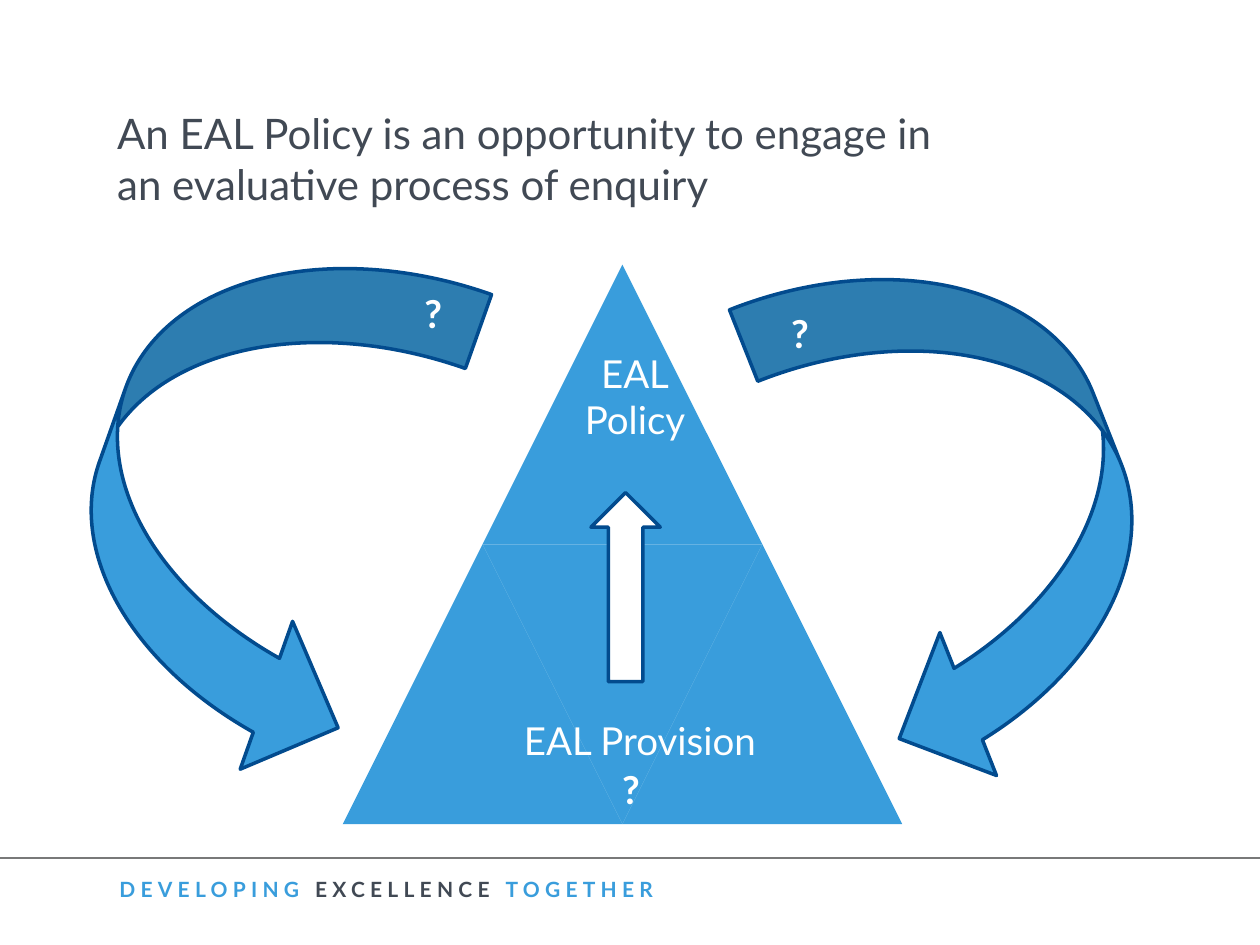
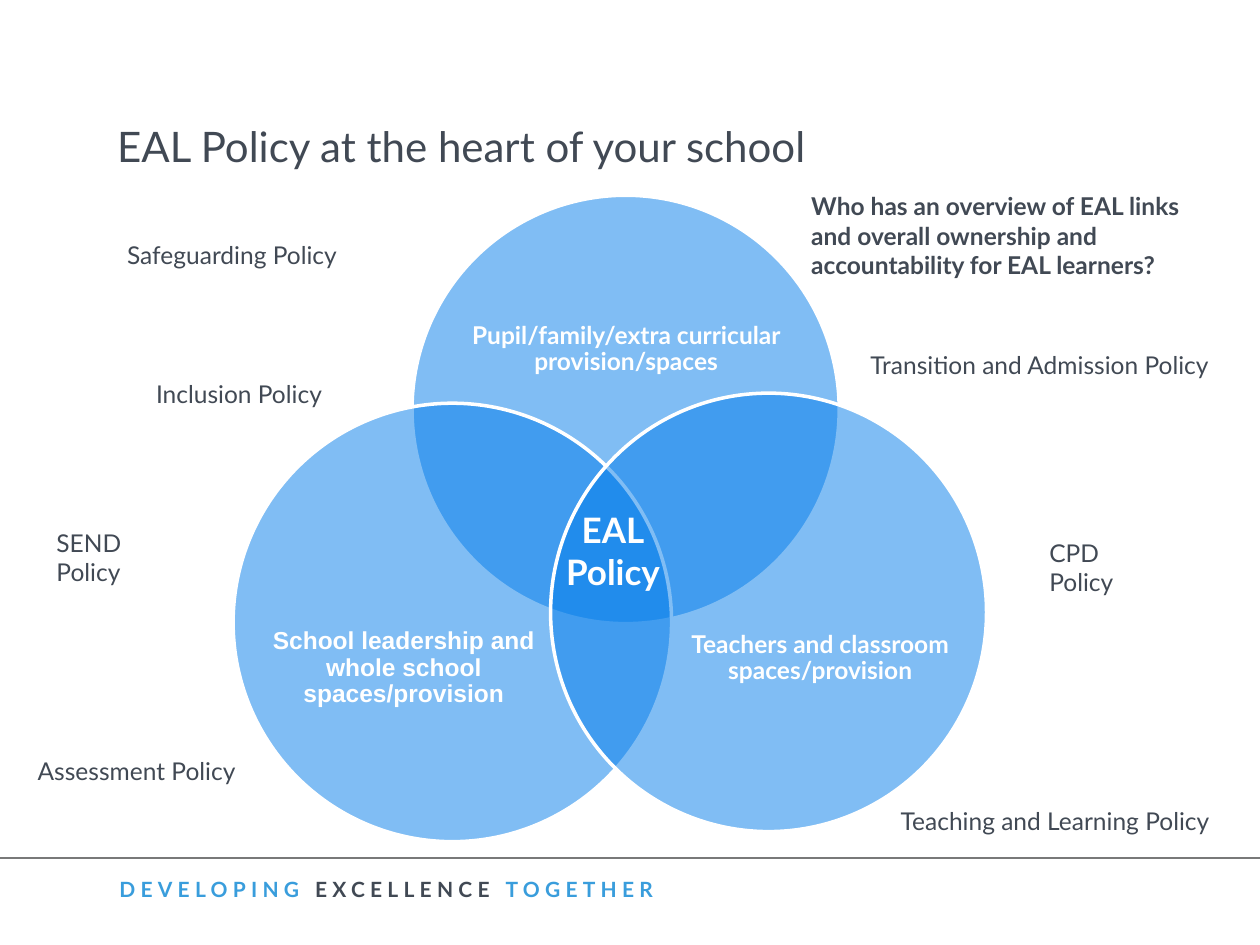
import dataclasses

import pptx
import pptx.dml.color
import pptx.enum.shapes
import pptx.enum.text
import pptx.oxml.ns
import pptx.util
from lxml import etree

RGBColor = pptx.dml.color.RGBColor
Shape = pptx.enum.shapes.MSO_SHAPE
Align = pptx.enum.text.PP_ALIGN
Anchor = pptx.enum.text.MSO_ANCHOR
qn = pptx.oxml.ns.qn

SKY = RGBColor(0x39, 0x9D, 0xDC)
NAVY = RGBColor(0x02, 0x4B, 0x8E)
AZURE = RGBColor(0x03, 0x7D, 0xEB)
SLATE = RGBColor(0x41, 0x49, 0x54)
GREY = RGBColor(0x78, 0x79, 0x79)
WHITE = RGBColor(0xFF, 0xFF, 0xFF)
FONT = "Lato"

# The slide is a grid of 100 columns by 75 rows
COLUMNS, ROWS = 100, 75
WIDTH, HEIGHT = pptx.util.Inches(10), pptx.util.Inches(7.5)
TITLE_ONLY = 5


@dataclasses.dataclass
class Box:
    """A region of the slide, in grid columns and rows."""
    column: float
    row: float
    columns: float
    rows: float

    def inside(self, column, row, columns, rows):
        return Box(self.column + column, self.row + row, columns, rows)

    def place(self):
        return (round(self.column * WIDTH / COLUMNS),
                round(self.row * HEIGHT / ROWS),
                round(self.columns * WIDTH / COLUMNS),
                round(self.rows * HEIGHT / ROWS))


FULL_PAGE = Box(0, 0, COLUMNS, ROWS)


def style_span(span, size, color, bold=False, name=FONT):
    span.font.size = pptx.util.Pt(size)
    span.font.name = name
    span.font.bold = bold
    span.font.color.rgb = color


def add_text(page, box, lines, size, color, bold=False, align=Align.LEFT, name=FONT):
    frame = page.shapes.add_textbox(*box.place()).text_frame
    frame.word_wrap = True
    frame.text = lines
    for para in frame.paragraphs:
        para.alignment = align
        for span in para.runs:
            style_span(span, size, color, bold, name)
    return frame


def add_figure(page, kind, box, fill, line=None, rotation=0):
    figure = page.shapes.add_shape(kind, *box.place())
    figure.shadow.inherit = False
    figure.fill.solid()
    figure.fill.fore_color.rgb = fill
    figure.rotation = rotation
    if line is None:
        figure.line.fill.background()
    else:
        figure.line.color.rgb = line
        figure.line.width = pptx.util.Pt(2)
    return figure


def add_title(page, box, text):
    title = page.shapes.title
    title.left, title.top, title.width, title.height = box.place()
    frame = title.text_frame
    frame.text = text
    frame.auto_size = pptx.enum.text.MSO_AUTO_SIZE.NONE
    frame.vertical_anchor = Anchor.MIDDLE
    frame.paragraphs[0].alignment = Align.LEFT
    style_span(frame.paragraphs[0].runs[0], 24, SLATE)


def add_footer(page, box):
    # Rule across the slide
    left, top, width, _ = box.place()
    rule = page.shapes.add_connector(pptx.enum.shapes.MSO_CONNECTOR.STRAIGHT,
                                     left, top, left + width, top)
    rule.line.color.rgb = GREY
    rule.line.width = pptx.util.Pt(0.75)
    etree.SubElement(rule._element.spPr, qn("a:effectLst"))

    # Spaced motto
    motto = page.shapes.add_textbox(*box.inside(8.5, 1, 54.4, 4.4).place())
    para = motto.text_frame.paragraphs[0]
    for word, color in (("DEVELOPING", SKY), (" EXCELLENCE ", SLATE), ("TOGETHER", SKY)):
        span = para.add_run()
        span.text = word
        style_span(span, 12, color, True)
        span.font._element.set("spc", "300")


def add_page(deck, title, title_row):
    page = deck.slides.add_slide(deck.slide_layouts[TITLE_ONLY])
    add_footer(page, Box(0, 68.1, COLUMNS, 6.9))
    add_title(page, Box(8.3, title_row, 67.7, 6.3), title)
    return page


def add_pyramid(page, box):
    # Four triangles, the middle one upside down
    wide, high = box.columns / 2, box.rows / 2
    for column, row, rotation in ((0.5, 0, 0), (0, 1, 0), (0.5, 1, 180), (1, 1, 0)):
        part = box.inside(column * wide, row * high, wide, high)
        add_figure(page, Shape.ISOSCELES_TRIANGLE, part, SKY, rotation=rotation)

    # Arrow from provision up to policy
    add_figure(page, Shape.UP_ARROW, box.inside(19.7, 18.1, 5.5, 15), WHITE, NAVY)
    add_text(page, box.inside(13.4, 35.4, 20.4, 6.7), "EAL Provision", 22, WHITE)
    add_text(page, box.inside(18.1, 6.3, 10.2, 10.4), "EAL\nPolicy", 22, WHITE,
             align=Align.CENTER)


def add_enquiry_cycle(page, box):
    # Curved arrows on both sides of the pyramid
    add_figure(page, Shape.CURVED_RIGHT_ARROW, box.inside(0, 0, 24.9, 42.7),
               SKY, NAVY, 19.5)
    add_figure(page, Shape.CURVED_LEFT_ARROW, box.inside(57.2, 0.6, 24.4, 42.7),
               SKY, NAVY, 338.4)

    # Question marks
    for column, row in ((40.7, 42.3), (54.1, 6.1), (25, 4.5)):
        add_text(page, box.inside(column, row, 3.4, 4.7), "?", 22, WHITE, True)


def add_venn(page, box):
    # Each circle with its caption: places within the box, wording, font
    circles = (
        ((14.2, 0, 33.9, 34), (18.8, 4.6, 24.8, 15.3),
         "Pupil/family/extra curricular provision/spaces", FONT),
        ((0, 16.5, 34.8, 34.8), (3.1, 28, 20.9, 19.1),
         "School leadership and whole school spaces/provision", "Arial"),
        ((25.2, 15.7, 34.6, 34.8), (36.2, 27.2, 20.8, 19.1),
         "Teachers and classroom spaces/provision", FONT),
    )
    for circle_place, caption_place, caption, name in circles:
        circle = add_figure(page, Shape.OVAL, box.inside(*circle_place), AZURE, WHITE)
        color = circle._element.spPr.find(qn("a:solidFill"))[0]
        etree.SubElement(color, qn("a:alpha")).set("val", "50000")

        frame = add_text(page, box.inside(*caption_place), caption, 14, WHITE, True,
                         Align.CENTER, name)
        frame.margin_left = frame.margin_right = 0
        frame.margin_top = frame.margin_bottom = 0
        frame.vertical_anchor = Anchor.MIDDLE
        frame.paragraphs[0].line_spacing = 0.9

    # Shared heart of the three circles
    add_text(page, box.inside(25.2, 24.4, 9.9, 7.7), "EAL\nPolicy", 20, WHITE, True,
             Align.CENTER)


def add_policy_labels(page, box):
    labels = (
        ("SEND Policy", 3.5, 41.4, 9),
        ("Safeguarding Policy", 9.1, 18.6, 19.5),
        ("Assessment Policy", 2, 59.5, 18.5),
        ("CPD Policy", 82.3, 42.2, 9),
        ("Teaching and Learning Policy", 70.5, 63.5, 28),
        ("Inclusion Policy", 11.4, 29.6, 16),
        ("Transition and Admission Policy", 68.1, 27.3, 30),
    )
    for text, column, row, columns in labels:
        add_text(page, box.inside(column, row, columns, 3.4), text, 14, SLATE)

    # Key question
    add_text(page, box.inside(63.4, 14.7, 34.6, 8.1),
             "Who has an overview of EAL links and overall ownership and "
             "accountability for EAL learners?", 14, SLATE, True)


def main():
    deck = pptx.Presentation()
    deck.slide_width, deck.slide_height = WIDTH, HEIGHT

    page = add_page(deck, "An EAL Policy is an opportunity to engage in "
                          "an evaluative process of enquiry", 9.4)
    add_pyramid(page, Box(27.2, 21, 44.4, 44.4))
    add_enquiry_cycle(page, Box(7.7, 18, 81.6, 43.3))

    page = add_page(deck, "EAL Policy at the heart of your school", 8.4)
    add_venn(page, Box(18.5, 15.5, 59.8, 51.3))
    add_policy_labels(page, FULL_PAGE)

    deck.save("out.pptx")


if __name__ == "__main__":
    main()
